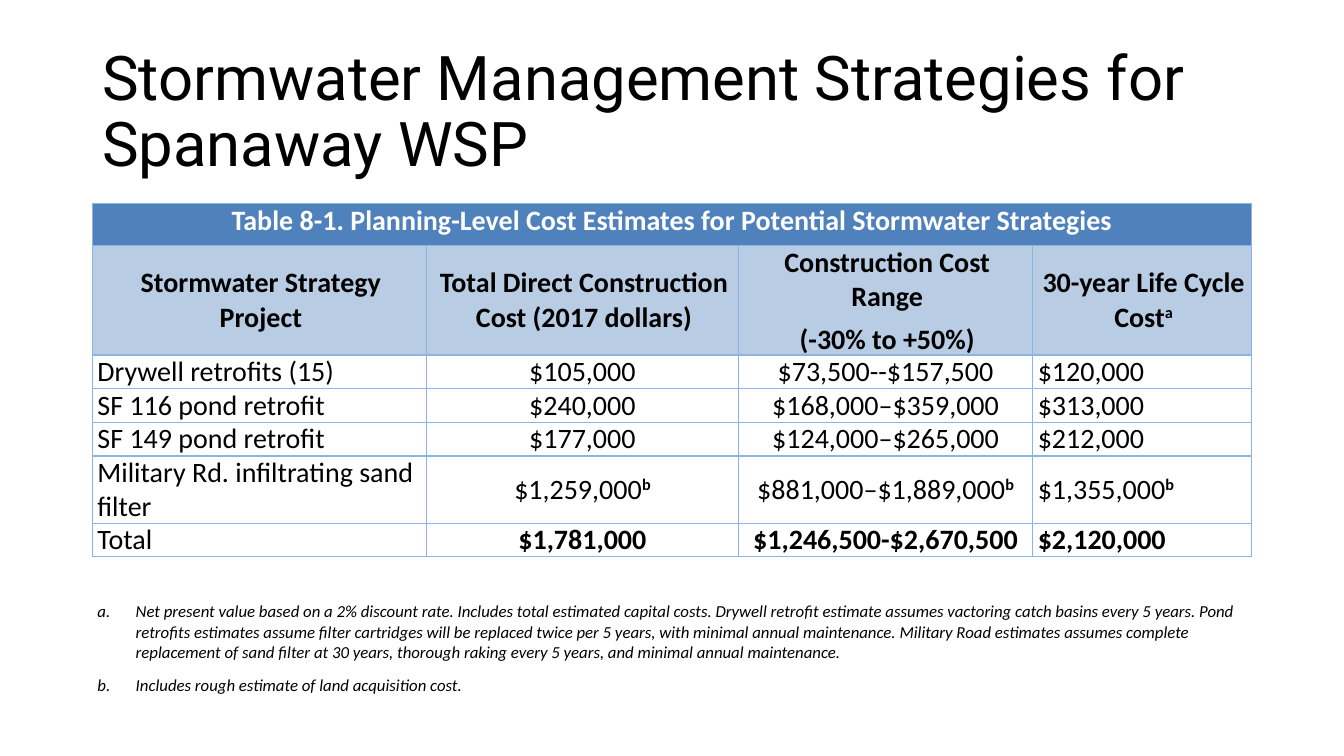
from dataclasses import dataclass

from lxml.etree import SubElement
from pptx import Presentation
from pptx.dml.color import RGBColor
from pptx.enum.text import MSO_ANCHOR as Anchor, PP_ALIGN as Align
from pptx.oxml.ns import qn
from pptx.util import Emu, Inches, Pt


@dataclass(frozen=True)
class Theme:
    ink: str = "000000"
    white: str = "FFFFFF"
    banner: str = "4F81BD"
    heading: str = "B8CCE4"
    rule: str = "8DB3E2"
    title_font: str = "Roboto"
    table_font: str = "Calibri"
    title_size: int = 44
    table_size: int = 20
    note_size: int = 12


COLUMNS, ROWS = 160, 90
TITLE = "Stormwater Management Strategies for Spanaway WSP"
BANNER = "Table 8-1. Planning-Level Cost Estimates for Potential Stormwater Strategies"
HEADINGS = [
    "Stormwater Strategy Project",
    "Total Direct Construction Cost (2017 dollars)",
    "Construction Cost Range\n(-30% to +50%)",
    "30-year Life Cycle Cost^a",
]
COSTS = [
    ["Drywell retrofits (15)", "$105,000", "$73,500--$157,500", "$120,000"],
    ["SF 116 pond retrofit", "$240,000", "$168,000–$359,000", "$313,000"],
    ["SF 149 pond retrofit", "$177,000", "$124,000–$265,000", "$212,000"],
    ["Military Rd. infiltrating sand filter", "$1,259,000^b",
     "$881,000–$1,889,000^b", "$1,355,000^b"],
    ["Total", "$1,781,000", "$1,246,500-$2,670,500", "$2,120,000"],
]
NOTES = (
    "Net present value based on a 2% discount rate. Includes total estimated capital costs. "
    "Drywell retrofit estimate assumes vactoring catch basins every 5 years. Pond retrofits "
    "estimates assume filter cartridges will be replaced twice per 5 years, with minimal annual "
    "maintenance. Military Road estimates assumes complete replacement of sand filter at 30 "
    "years, thorough raking every 5 years, and minimal annual maintenance.\n"
    "Includes rough estimate of land acquisition cost."
)
COLUMN_WIDTHS = [39.75, 37.2, 35, 26.05]
ROW_HEIGHTS = [5, 10.45, 3.7, 3.7, 3.7, 4.2, 3.7, 22]


def apply(target, values):
    for name, value in values.items():
        setattr(target, name, value)


class SlideBuilder:
    def __init__(self, presentation, theme):
        self.theme = theme
        self.column = presentation.slide_width / COLUMNS
        self.row = presentation.slide_height / ROWS
        self.slide = presentation.slides.add_slide(presentation.slide_layouts[6])

    def across(self, count):
        return Emu(round(count * self.column))

    def down(self, count):
        return Emu(round(count * self.row))

    def area(self, left, top, width, height):
        return self.across(left), self.down(top), self.across(width), self.down(height)

    def text(self, frame, text, font, color, layout=None, margin=0, indent=0, numbered=False):
        for index, line in enumerate(text.split("\n")):
            paragraph = frame.paragraphs[0] if index == 0 else frame.add_paragraph()
            properties = paragraph._p.get_or_add_pPr()
            properties.set("marL", str(Inches(margin)))
            properties.set("indent", str(Inches(indent)))
            if numbered:
                SubElement(properties, qn("a:buAutoNum"), type="alphaLcPeriod")
            apply(paragraph, layout or {})
            if index == 0:
                paragraph.space_before = Pt(0)
            for position, part in enumerate(line.split("^")):
                run = paragraph.add_run()
                run.text = part
                apply(run.font, font)
                run.font.color.rgb = RGBColor.from_string(color)
                if position:
                    run.font.bold = True
                    run._r.get_or_add_rPr().set("baseline", "30000")

    def title(self, text, *area):
        frame = self.slide.shapes.add_textbox(*self.area(*area)).text_frame
        apply(frame, {"word_wrap": True, "vertical_anchor": Anchor.MIDDLE})
        font = {"name": self.theme.title_font, "size": Pt(self.theme.title_size)}
        self.text(frame, text, font, self.theme.ink, {"line_spacing": 0.9})

    def table(self, left, top, widths, heights):
        area = self.area(left, top, sum(widths), sum(heights))
        table = self.slide.shapes.add_table(len(heights), len(widths), *area).table
        apply(table, {"first_row": False, "horz_banding": False})
        for column, width in zip(table.columns, widths):
            column.width = self.across(width)
        for row, height in zip(table.rows, heights):
            row.height = self.down(height)
        return table

    def borders(self, cell, visible):
        properties = cell._tc.get_or_add_tcPr()
        for side in "LRTB":
            line = SubElement(properties, qn(f"a:ln{side}"), w=str(Pt(1)))
            if side in visible:
                fill = SubElement(line, qn("a:solidFill"))
                SubElement(fill, qn("a:srgbClr"), val=self.theme.rule)
            else:
                SubElement(line, qn("a:noFill"))

    def cell(self, cell, text, fill=None, color=None, visible="LRTB", anchor=Anchor.MIDDLE,
             align=Align.LEFT, before=2, after=2, font=None, **paragraph):
        self.borders(cell, visible)
        apply(cell, {
            "margin_left": Inches(0.05), "margin_right": Inches(0.05),
            "margin_top": 0, "margin_bottom": 0, "vertical_anchor": anchor,
        })
        if fill:
            cell.fill.solid()
            cell.fill.fore_color.rgb = RGBColor.from_string(fill)
        else:
            cell.fill.background()
        if text:
            font = {"name": self.theme.table_font, "size": Pt(self.theme.table_size),
                    "bold": False, **(font or {})}
            layout = {"alignment": align, "space_before": Pt(before), "space_after": Pt(after)}
            self.text(cell.text_frame, text, font, color or self.theme.ink, layout, **paragraph)

    def wide_row(self, table, row, text, **style):
        last = len(table.columns) - 1
        table.cell(row, 0).merge(table.cell(row, last))
        for column in range(last + 1):
            self.cell(table.cell(row, column), "" if column else text, **style)


def main():
    presentation = Presentation()
    apply(presentation, {"slide_width": Inches(COLUMNS / 12), "slide_height": Inches(ROWS / 12)})
    theme = Theme()
    builder = SlideBuilder(presentation, theme)
    builder.title(TITLE, 11, 4.8, 138, 17.4)
    table = builder.table(11, 24.25, COLUMN_WIDTHS, ROW_HEIGHTS)

    heading = {"align": Align.CENTER, "before": 3, "after": 3, "font": {"bold": True}}
    builder.wide_row(table, 0, BANNER, fill=theme.banner, color=theme.white,
                     anchor=Anchor.TOP, **heading)
    for column, text in enumerate(HEADINGS):
        builder.cell(table.cell(1, column), text, fill=theme.heading, margin=0.03, **heading)
    for row, costs in enumerate(COSTS, start=2):
        for column, text in enumerate(costs):
            builder.cell(table.cell(row, column), text,
                         align=Align.CENTER if column in (1, 2) else Align.LEFT,
                         font={"bold": costs[0] == "Total" and column > 0})
    builder.wide_row(table, len(ROW_HEIGHTS) - 1, NOTES, visible="T", before=3, after=6,
                     font={"size": Pt(theme.note_size), "italic": True},
                     margin=0.38, indent=-0.38, numbered=True)
    presentation.save("out.pptx")


if __name__ == "__main__":
    main()
